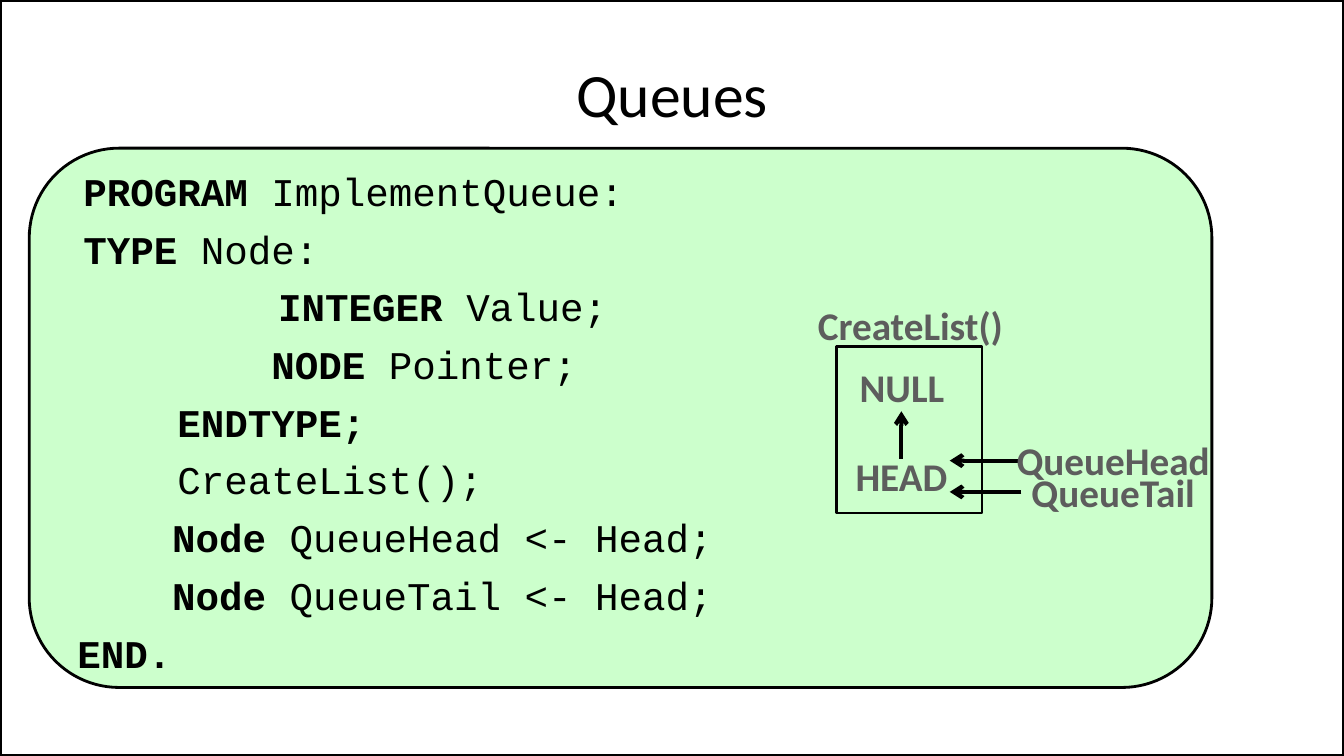
from pptx import Presentation
from pptx.dml.color import RGBColor
from pptx.enum.shapes import MSO_CONNECTOR, MSO_SHAPE
from pptx.enum.text import MSO_ANCHOR, PP_ALIGN
from pptx.oxml.ns import qn
from pptx.util import Inches, Pt
from lxml.etree import SubElement

BLACK = "000000"
LABEL_GRAY = "5D5D5D"
CODE_GREEN = "CCFFCC"

TITLE_FORMAT = {"name": "Calibri", "size": Pt(44)}
LABEL_FORMAT = {"name": "Calibri", "size": Pt(28), "bold": True}
CODE_FORMAT = {"name": "Courier New", "size": Pt(28)}

CODE_LINES = [
    (0.06, "PROGRAM ", "ImplementQueue:"),
    (0.06, "TYPE ", "Node:"),
    (1.06, "    INTEGER ", "Value;"),
    (0.06, "        NODE", " Pointer;"),
    (0.06, "    ENDTYPE;", ""),
    (0.06, "", "    CreateList();"),
    (0.94, "Node ", "QueueHead <- Head;"),
    (0.94, "Node ", "QueueTail <- Head;"),
    (0, "END.", ""),
]

NODE_LABELS = [
    ("NULL", 8.42, 3.56, 1.05),
    ("HEAD", 8.38, 4.44, 1.12),
    ("QueueHead", 9.97, 4.28, 2.14),
    ("CreateList()", 8, 2.94, 2.06),
    ("QueueTail", 10.12, 4.6, 1.84),
]

POINTERS = [
    (8.94, 4.55, 8.94, 4.08),
    (10.13, 4.57, 9.42, 4.57),
    (10.13, 4.88, 9.42, 4.88),
]


def color(hex_value):
    return RGBColor.from_string(hex_value)


def apply_format(font, values, hex_value):
    for attribute, value in values.items():
        setattr(font, attribute, value)
    font.color.rgb = color(hex_value)


def add_panel(slide, preset, left, top, width, height, line_width, fill=None):
    panel = slide.shapes.add_shape(
        preset, Inches(left), Inches(top), Inches(width), Inches(height))
    panel.shadow.inherit = False
    if fill:
        panel.fill.solid()
        panel.fill.fore_color.rgb = color(fill)
    else:
        panel.fill.background()
    panel.line.color.rgb = color(BLACK)
    panel.line.width = Pt(line_width)


def add_text_frame(slide, left, top, width, height, wrap=True):
    box = slide.shapes.add_textbox(
        Inches(left), Inches(top), Inches(width), Inches(height))
    box.text_frame.word_wrap = wrap
    return box.text_frame


def add_centered_text(slide, text, bounds, values, hex_value, wrap):
    frame = add_text_frame(slide, *bounds, wrap=wrap)
    frame.vertical_anchor = MSO_ANCHOR.MIDDLE if wrap else MSO_ANCHOR.TOP
    paragraph = frame.paragraphs[0]
    paragraph.alignment = PP_ALIGN.CENTER
    run = paragraph.add_run()
    run.text = text
    apply_format(run.font, values, hex_value)


def add_code(slide):
    frame = add_text_frame(slide, 0.67, 1.61, 12, 4.95)
    for index, (indent, keyword, rest) in enumerate(CODE_LINES):
        line = frame.add_paragraph() if index else frame.paragraphs[0]
        properties = line._p.get_or_add_pPr()
        properties.set("marL", str(Inches(indent)))
        properties.set("indent", "0")
        if index:
            line.space_before = Pt(7.6)
        for text, bold in ((keyword, True), (rest, False)):
            if text:
                run = line.add_run()
                run.text = text
                apply_format(run.font, {**CODE_FORMAT, "bold": bold}, BLACK)


def add_pointer(slide, *ends):
    pointer = slide.shapes.add_connector(
        MSO_CONNECTOR.STRAIGHT, *[Inches(end) for end in ends])
    pointer.line.color.rgb = color(BLACK)
    pointer.line.width = Pt(3)
    SubElement(pointer.line._get_or_add_ln(), qn("a:tailEnd"), type="arrow")
    SubElement(pointer._element.spPr, qn("a:effectLst"))


def main():
    presentation = Presentation()
    presentation.slide_width = Inches(13.33)
    presentation.slide_height = Inches(7.5)
    slide = presentation.slides.add_slide(presentation.slide_layouts[6])

    add_panel(slide, MSO_SHAPE.RECTANGLE, 0, 0, 13.33, 7.5, 3)
    add_panel(slide, MSO_SHAPE.ROUNDED_RECTANGLE,
              0.29, 1.47, 11.73, 5.35, 2, CODE_GREEN)
    add_code(slide)
    add_centered_text(slide, "Queues", (0.67, 0.3, 12, 1.25),
                      TITLE_FORMAT, BLACK, True)
    add_panel(slide, MSO_SHAPE.RECTANGLE, 8.3, 3.44, 1.44, 1.65, 2)
    for ends in POINTERS:
        add_pointer(slide, *ends)
    for text, left, top, width in NODE_LABELS:
        add_centered_text(slide, text, (left, top, width, 0.57),
                          LABEL_FORMAT, LABEL_GRAY, False)

    presentation.save("out.pptx")


if __name__ == "__main__":
    main()
